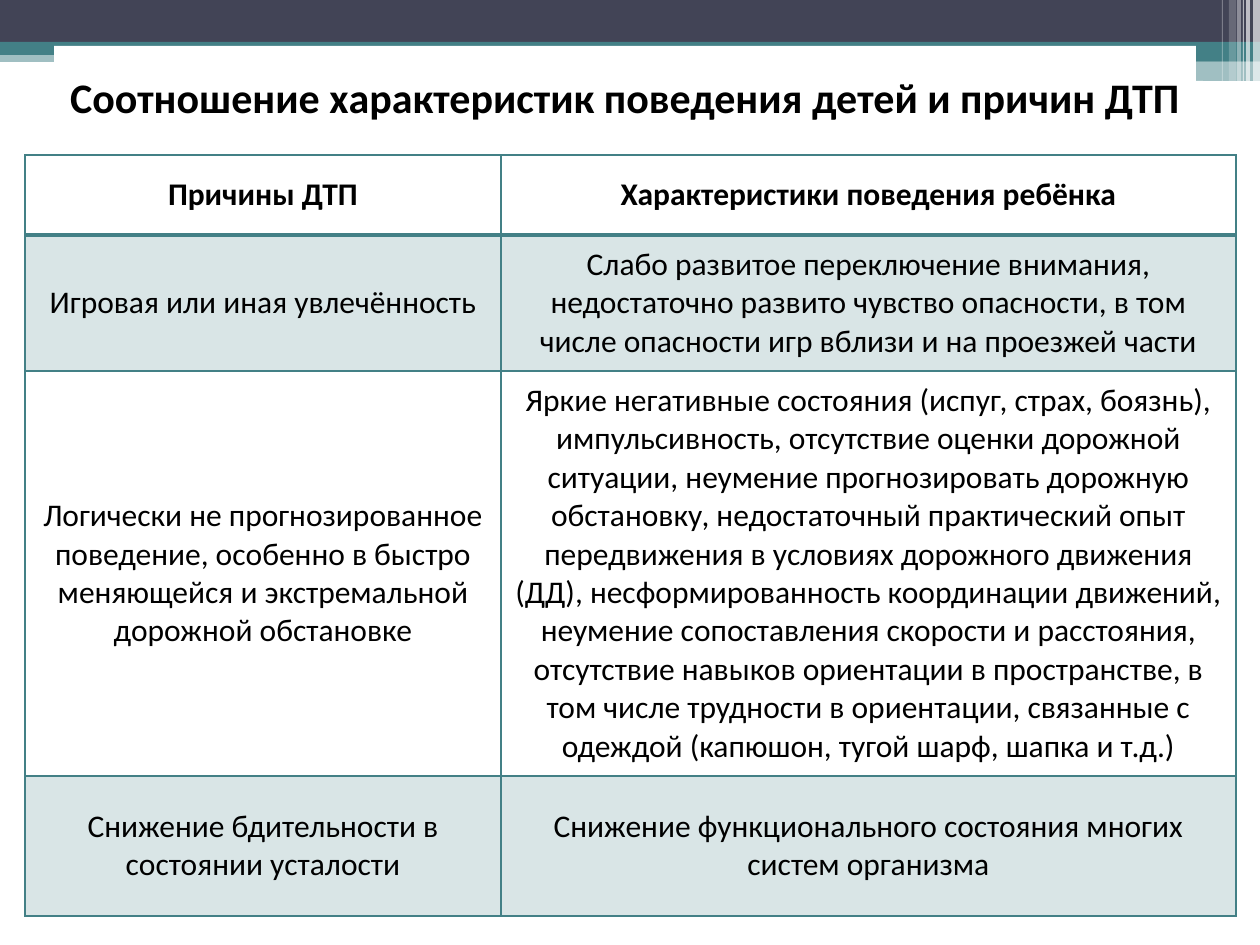
from lxml import etree
from pptx import Presentation
from pptx.dml.color import RGBColor
from pptx.enum.shapes import MSO_SHAPE
from pptx.enum.text import MSO_ANCHOR, PP_ALIGN
from pptx.oxml.ns import qn
from pptx.util import Emu, Pt

RECT, ROUNDED = MSO_SHAPE.RECTANGLE, MSO_SHAPE.ROUNDED_RECTANGLE
CENTER, MIDDLE, BOTTOM = PP_ALIGN.CENTER, MSO_ANCHOR.MIDDLE, MSO_ANCHOR.BOTTOM

TEAL = RGBColor(0x43, 0x80, 0x86)
SLATE = RGBColor(0x42, 0x44, 0x56)
WHITE = RGBColor(0xFF, 0xFF, 0xFF)
BLACK = RGBColor(0, 0, 0)
FONT = "Calibri"

TITLE = "Соотношение характеристик поведения детей и причин ДТП"
ROWS = [
    ("Причины ДТП", "Характеристики поведения ребёнка"),
    ("Игровая или иная увлечённость",
     "Слабо развитое переключение внимания, недостаточно развито чувство "
     "опасности, в том числе опасности игр вблизи и на проезжей части"),
    ("Логически не прогнозированное поведение, особенно в быстро "
     "меняющейся и экстремальной дорожной обстановке",
     "Яркие негативные состояния (испуг, страх, боязнь), импульсивность, "
     "отсутствие оценки дорожной ситуации, неумение прогнозировать дорожную "
     "обстановку, недостаточный практический опыт передвижения в условиях "
     "дорожного движения (ДД), несформированность координации движений, "
     "неумение сопоставления скорости и расстояния, отсутствие навыков "
     "ориентации в пространстве, в том числе трудности в ориентации, "
     "связанные с одеждой (капюшон, тугой шарф, шапка и т.д.)"),
    ("Снижение бдительности в состоянии усталости",
     "Снижение функционального состояния многих систем организма"),
]
COLUMN_WIDTHS = [476, 735]
ROW_HEIGHTS = [80, 136, 405, 140]

BANDS = [
    (RECT, 0, 50, 1260, 12, TEAL, 50),
    (RECT, 0, 0, 1260, 42, SLATE, 100),
    (RECT, 0, 42, 1260, 13, TEAL, 100),
    (RECT, 746, 49, 514, 12, TEAL, 100),
    (RECT, 746, 61, 514, 20, TEAL, 50),
    (ROUNDED, 1016, 81, 220, 5, WHITE, 100),
]
STRIPES = [(1253, 7, 86, 65), (1246, 4, 86, 65), (1243, 1, 86, 60),
           (1237, 4, 86, 40), (1229, 7, 81, 20), (1222, 1, 81, 30)]


def px(n):
    return Emu(n * 914400 // 126)


def paint(fill, holder, color, opacity):
    fill.solid()
    fill.fore_color.rgb = color
    if opacity < 100:
        tint = holder.find(f"{qn('a:solidFill')}/{qn('a:srgbClr')}")
        etree.SubElement(tint, qn("a:alpha"), val=str(opacity * 1000))


def add_band(slide, kind, x, y, w, h, color, opacity):
    band = slide.shapes.add_shape(kind, px(x), px(y), px(w), px(h))
    band.shadow.inherit = False
    band.line.fill.background()
    paint(band.fill, band._element.spPr, color, opacity)


def write(frame, text, size, bold):
    frame.text = text
    paragraph = frame.paragraphs[0]
    paragraph.alignment = CENTER
    font = paragraph.font
    font.name, font.size, font.bold = FONT, Pt(size), bold
    font.color.rgb = BLACK


def add_borders(properties, widths):
    for i, (side, points) in enumerate(widths.items()):
        border = etree.Element(qn(f"a:{side}"), w=str(Pt(points)))
        stroke = etree.SubElement(border, qn("a:solidFill"))
        etree.SubElement(stroke, qn("a:srgbClr"), val=str(TEAL))
        properties.insert(i, border)


def add_causes(slide):
    table = slide.shapes.add_table(
        len(ROWS), len(COLUMN_WIDTHS), px(25), px(155),
        px(sum(COLUMN_WIDTHS)), px(sum(ROW_HEIGHTS))).table
    table.first_row = table.horz_banding = False
    for column, width in zip(table.columns, COLUMN_WIDTHS):
        column.width = px(width)
    for r, (texts, height) in enumerate(zip(ROWS, ROW_HEIGHTS)):
        table.rows[r].height = px(height)
        for c, text in enumerate(texts):
            cell = table.cell(r, c)
            write(cell.text_frame, text, 18, r == 0)
            cell.vertical_anchor = MIDDLE
            cell.margin_left = cell.margin_right = px(10)
            cell.margin_top = cell.margin_bottom = px(10)
            properties = cell._tc.get_or_add_tcPr()
            if r % 2:
                paint(cell.fill, properties, TEAL, 20)
            else:
                cell.fill.background()
            add_borders(properties, {"lnL": 1, "lnR": 1,
                                     "lnT": 2 if r == 1 else 1,
                                     "lnB": 2 if r == 0 else 1})


def main():
    deck = Presentation()
    deck.slide_width, deck.slide_height = px(1260), px(945)
    slide = deck.slides.add_slide(deck.slide_layouts[5])

    for band in BANDS:
        add_band(slide, *band)
    for x, w, h, opacity in STRIPES:
        add_band(slide, RECT, x, 0, w, h, WHITE, opacity)

    title = slide.shapes.title
    title.left, title.top, title.width, title.height = map(px, (54, 46, 1142, 79))
    title.fill.solid()
    title.fill.fore_color.rgb = WHITE
    write(title.text_frame, TITLE, 24, True)
    title.text_frame.vertical_anchor = BOTTOM
    title.text_frame.margin_bottom = px(3)
    slide.shapes._spTree.append(title._element)

    add_causes(slide)
    deck.save("out.pptx")


if __name__ == "__main__":
    main()
